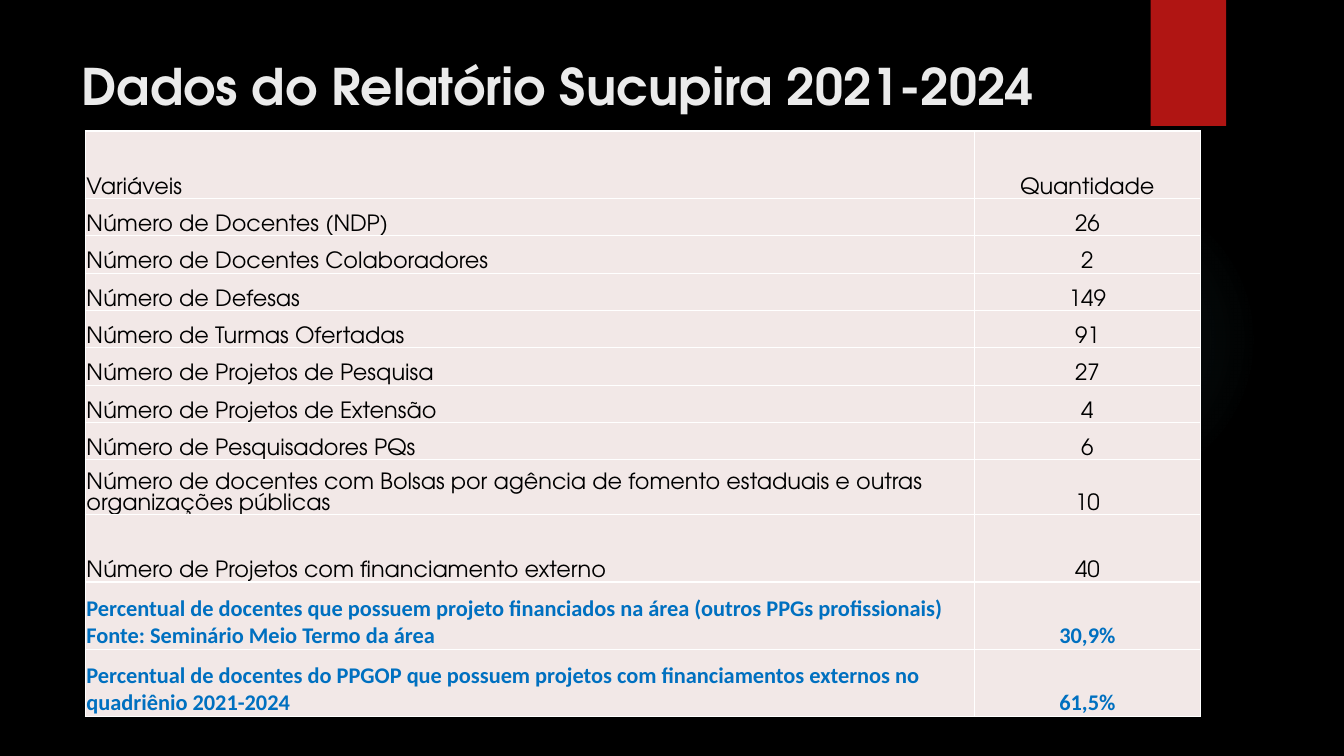
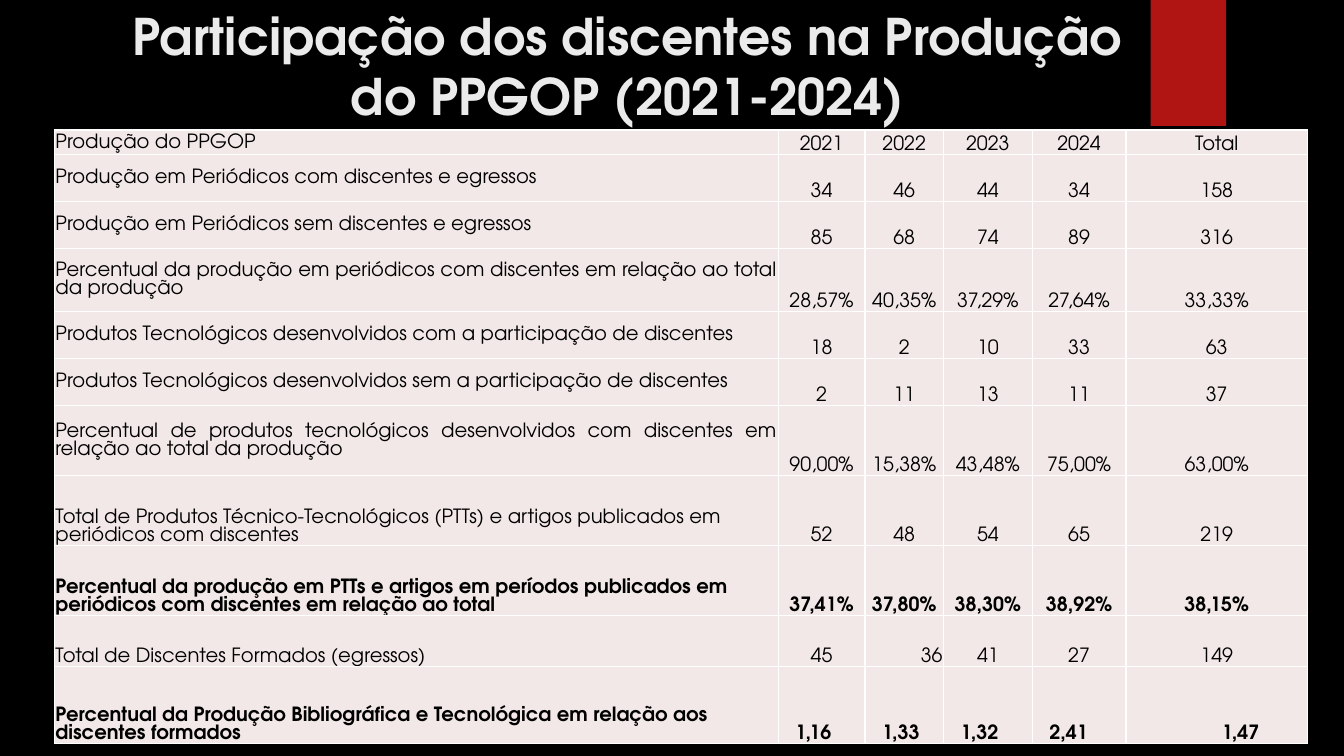
from lxml import etree
from pptx import Presentation
from pptx.dml.color import RGBColor
from pptx.enum.shapes import MSO_SHAPE as SHAPE
from pptx.enum.text import MSO_ANCHOR as ANCHOR, PP_ALIGN as ALIGN
from pptx.oxml import parse_xml
from pptx.oxml.ns import qn
from pptx.util import Inches, Pt

COLORS = {"black": "000000", "red": "B01513", "title": "EBEBEB", "cell": "F2E8E7",
          "border": "FFFFFF", "blue": "0070C0", "glow": "50B9C1"}
FONT = "TeX Gyre Adventor"
NS = "http://schemas.openxmlformats.org/drawingml/2006/main"

prs = Presentation()
prs.slide_width, prs.slide_height = Inches(13.33), Inches(7.5)
# All lengths below are percentages of the slide's width (PW) or height (PH).
PW, PH = prs.slide_width / 100, prs.slide_height / 100


def write(tf, text, size=16, color="black", font=FONT, bold=False, align=ALIGN.LEFT):
    p = tf.paragraphs[0]
    p.alignment = align
    r = p.add_run()
    r.text = text
    r.font.size, r.font.name, r.font.bold = Pt(size), font, bold
    r.font.color.rgb = RGBColor.from_string(COLORS[color])


def box(left, top, width, height):
    """Turn percentages of the slide into a position and size."""
    return int(left * PW), int(top * PH), int(width * PW), int(height * PH)


blue = {"color": "blue", "font": "Calibri", "bold": True}
bold = {"bold": True}
middle = {"anchor": ANCHOR.MIDDLE, "align": ALIGN.JUSTIFY}

# Each row: height, label, values, format of the whole row, format of the label.
indicators = [
    (8.92, "Variáveis", "Quantidade", {}, {}),
    (4.94, "Número de Docentes (NDP)", "26", {}, {}),
    (4.94, "Número de Docentes Colaboradores", "2", {}, {}),
    (4.94, "Número de Defesas", "149", {}, {}),
    (4.94, "Número de Turmas Ofertadas", "91", {}, {}),
    (4.94, "Número de Projetos de Pesquisa", "27", {}, {}),
    (4.94, "Número de Projetos de Extensão", "4", {}, {}),
    (4.94, "Número de Pesquisadores PQs", "6", {}, {}),
    (6.8, "Número de docentes com Bolsas por agência de fomento estaduais e outras "
     "organizações públicas", "10", {}, {}),
    (8.92, "Número de Projetos com financiamento externo", "40", {}, {}),
    (8.92, "Percentual de docentes que possuem projeto financiados na área "
     "(outros PPGs profissionais) Fonte: Seminário Meio Termo da área", "30,9%", blue, {}),
    (8.92, "Percentual de docentes do PPGOP que possuem projetos com financiamentos "
     "externos no quadriênio 2021-2024", "61,5%", blue, {}),
]
production = [
    (3.04, "Produção do PPGOP", "2021 2022 2023 2024 Total", {}, middle),
    (6.2, "Produção em Periódicos com discentes e egressos", "34 46 44 34 158", {}, middle),
    (6.2, "Produção em Periódicos sem discentes e egressos", "85 68 74 89 316", {}, middle),
    (8.35, "Percentual da produção em periódicos com discentes em relação ao total da produção",
     "28,57% 40,35% 37,29% 27,64% 33,33%", {}, middle),
    (6.2, "Produtos Tecnológicos desenvolvidos com a participação de discentes",
     "18 2 10 33 63", {}, middle),
    (6.2, "Produtos Tecnológicos desenvolvidos sem a participação de discentes",
     "2 11 13 11 37", {}, middle),
    (9.28, "Percentual de produtos tecnológicos desenvolvidos com discentes em relação ao "
     "total da produção", "90,00% 15,38% 43,48% 75,00% 63,00%", {}, middle),
    (9.28, "Total de Produtos Técnico-Tecnológicos (PTTs) e artigos publicados em "
     "periódicos com discentes", "52 48 54 65 219", {}, {}),
    (9.28, "Percentual da produção em PTTs e artigos em períodos publicados em periódicos "
     "com discentes em relação ao total", "37,41% 37,80% 38,30% 38,92% 38,15%", bold, {}),
    (6.7, "Total de Discentes Formados (egressos)", "45 36 41 27 149", {}, {}),
    (10.2, "Percentual da Produção Bibliográfica e Tecnológica em relação aos discentes "
     "formados", "1,16 1,33 1,32 2,41 1,47", bold, {}),
]
# Cells of the production table that differ from their row, by (row, column).
production_cells = {(9, 2): {"align": ALIGN.RIGHT}, (10, 5): {"align": ALIGN.LEFT, "indent": 0.95}}
for c in range(1, 5):
    production_cells[10, c] = {"align": ALIGN.LEFT, "indent": 0.17}

slides = [
    {"title": "Dados do Relatório Sucupira 2021-2024", "title_box": (5.33, 6.67, 77.2, 12.8),
     "align": ALIGN.LEFT, "origin": (6.36, 17.33), "cols": [66.15, 16.8],
     "rows": indicators, "size": 16, "cells": {}},
    {"title": "Participação dos discentes na Produção do PPGOP (2021-2024)",
     "title_box": (8.07, 0, 77.2, 20.4), "align": ALIGN.CENTER, "origin": (4.05, 17.2),
     "cols": [53.86, 6.45, 5.85, 6.6, 6.98, 13.5],
     "rows": production, "size": 14, "cells": production_cells},
]

fill = prs.slide_master.background.fill
fill.solid()
fill.fore_color.rgb = RGBColor.from_string(COLORS["black"])

for content in slides:
    s = prs.slides.add_slide(prs.slide_layouts[6])

    glow = s.shapes.add_shape(SHAPE.OVAL, *box(70.59, 24.4, 23.1, 41.07))
    bar = s.shapes.add_shape(SHAPE.RECTANGLE, *box(85.62, 0, 5.62, 16.67))
    for sp in (glow, bar):
        sp.shadow.inherit = False
        sp.line.fill.background()
    bar.fill.solid()
    bar.fill.fore_color.rgb = RGBColor.from_string(COLORS["red"])
    stops = "".join(
        f'<a:gs pos="{pos * 1000}"><a:srgbClr val="{COLORS["glow"]}">'
        f'<a:alpha val="{alpha * 1000}"/></a:srgbClr></a:gs>'
        for pos, alpha in ((0, 7), (36, 6), (69, 0)))
    geometry = glow.element.spPr.find(qn("a:prstGeom"))
    geometry.addnext(parse_xml(
        f'<a:gradFill xmlns:a="{NS}"><a:gsLst>{stops}</a:gsLst><a:path path="circle">'
        '<a:fillToRect l="50000" t="50000" r="50000" b="50000"/></a:path></a:gradFill>'))

    tf = s.shapes.add_textbox(*box(*content["title_box"])).text_frame
    tf.word_wrap = True
    write(tf, content["title"], size=36, color="title", bold=True, align=content["align"])

    rows, cols = content["rows"], content["cols"]
    area = box(*content["origin"], sum(cols), sum(row[0] for row in rows))
    table = s.shapes.add_table(len(rows), len(cols), *area).table
    table.first_row = table.horz_banding = False
    for c, width in enumerate(cols):
        table.columns[c].width = int(width * PW)
    for r, (height, label, values, row_format, label_format) in enumerate(rows):
        table.rows[r].height = int(height * PH)
        for c, text in enumerate([label, *values.split()]):
            cell = table.cell(r, c)
            own = {"align": ALIGN.CENTER} if c else label_format
            style = {"size": content["size"], **row_format, **own,
                     **content["cells"].get((r, c), {})}
            cell.vertical_anchor = style.pop("anchor", ANCHOR.BOTTOM)
            cell.margin_left = Inches(style.pop("indent", 0.01))
            cell.margin_right = cell.margin_top = Inches(0.01)
            cell.margin_bottom = 0
            tcPr = cell._tc.get_or_add_tcPr()
            for side in ("lnL", "lnR", "lnT", "lnB"):
                ln = etree.SubElement(tcPr, qn(f"a:{side}"), w=str(Pt(1)))
                solid = etree.SubElement(ln, qn("a:solidFill"))
                etree.SubElement(solid, qn("a:srgbClr"), val=COLORS["border"])
            cell.fill.solid()
            cell.fill.fore_color.rgb = RGBColor.from_string(COLORS["cell"])
            write(cell.text_frame, text, **style)

prs.save("out.pptx")
